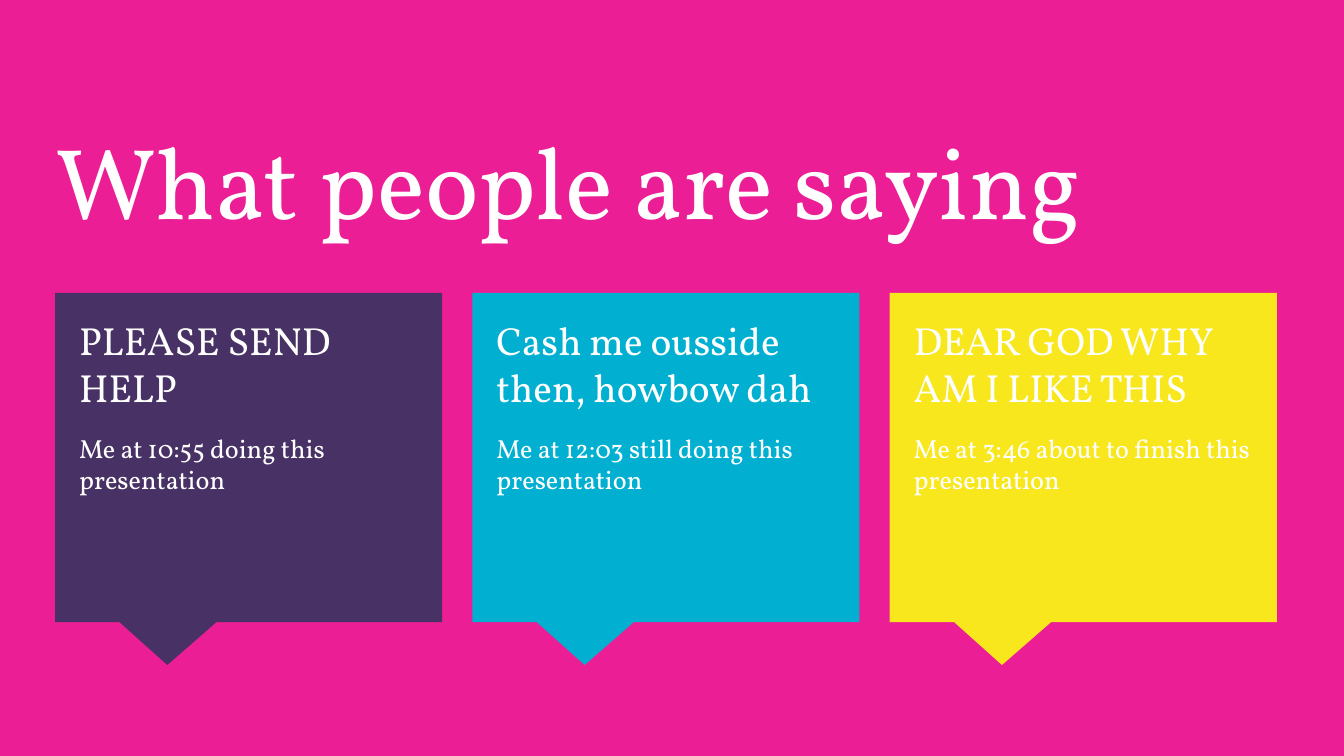
from dataclasses import dataclass

from pptx import Presentation
from pptx.dml.color import RGBColor
from pptx.enum.shapes import MSO_SHAPE
from pptx.enum.text import MSO_ANCHOR, MSO_AUTO_SIZE, PP_ALIGN
from pptx.util import Inches, Pt

BUBBLE = MSO_SHAPE.RECTANGULAR_CALLOUT
TOP = MSO_ANCHOR.TOP
LEFT = PP_ALIGN.LEFT
FIXED = MSO_AUTO_SIZE.NONE

TITLE = "What people are saying"
QUOTES = [
    ("PLEASE SEND HELP", "Me at 10:55 doing this presentation", "483165"),
    ("Cash me ousside then, howbow dah",
     "Me at 12:03 still doing this presentation", "01AFD1"),
    ("DEAR GOD WHY AM I LIKE THIS",
     "Me at 3:46 about to finish this presentation", "F8E71C"),
]


@dataclass(frozen=True)
class Theme:
    font: str = "Vollkorn"
    back: str = "EB1E95"
    ink: str = "FFFFFF"
    title: int = 54
    quote: int = 21
    source: int = 14
    after: int = 12


THEME = Theme()
WIDE = 10
HIGH = WIDE * 9 / 16
EDGE, END, ROW = 0.41, 9.5, 2.18
CARD_W, CARD_H = 2.88, 2.45
STEP = (END - EDGE - CARD_W) / (len(QUOTES) - 1)
PAD_X, PAD_Y = 0.08, 0.07
TEXT_W, TEXT_H = 2.71, 2.19
TAIL = (-0.21, 0.63)


def paint(fill, color):
    fill.solid()
    fill.fore_color.rgb = RGBColor.from_string(color)


def write(frame, lines, after=0):
    frame.word_wrap = True
    frame.auto_size = FIXED
    frame.vertical_anchor = TOP
    frame.margin_left = frame.margin_right = Inches(0.1)
    frame.margin_top = frame.margin_bottom = Inches(0.1)
    for i, (text, size) in enumerate(lines):
        para = frame.add_paragraph() if i else frame.paragraphs[0]
        para.alignment = LEFT
        para.space_after = Pt(after)
        run = para.add_run()
        run.text = text
        run.font.name = THEME.font
        run.font.size = Pt(size)
        run.font.color.rgb = RGBColor.from_string(THEME.ink)


def add_card(slide, col, quote, source, color):
    x = EDGE + col * STEP
    card = slide.shapes.add_shape(
        BUBBLE, Inches(x), Inches(ROW), Inches(CARD_W), Inches(CARD_H))
    card.shadow.inherit = False
    paint(card.fill, color)
    card.line.fill.background()
    for i, value in enumerate(TAIL):
        card.adjustments[i] = value
    box = slide.shapes.add_textbox(
        Inches(x + PAD_X), Inches(ROW + PAD_Y), Inches(TEXT_W), Inches(TEXT_H))
    lines = [(quote, THEME.quote), (source, THEME.source)]
    write(box.text_frame, lines, THEME.after)


def main():
    deck = Presentation()
    deck.slide_width, deck.slide_height = Inches(WIDE), Inches(HIGH)
    slide = deck.slides.add_slide(deck.slide_layouts[5])
    paint(slide.background.fill, THEME.back)
    head = slide.shapes.title
    head.left, head.top = Inches(0.31), Inches(0.78)
    head.width, head.height = Inches(9.43), Inches(1.12)
    write(head.text_frame, [(TITLE, THEME.title)])
    for col, quote in enumerate(QUOTES):
        add_card(slide, col, *quote)
    deck.save("out.pptx")


if __name__ == "__main__":
    main()
